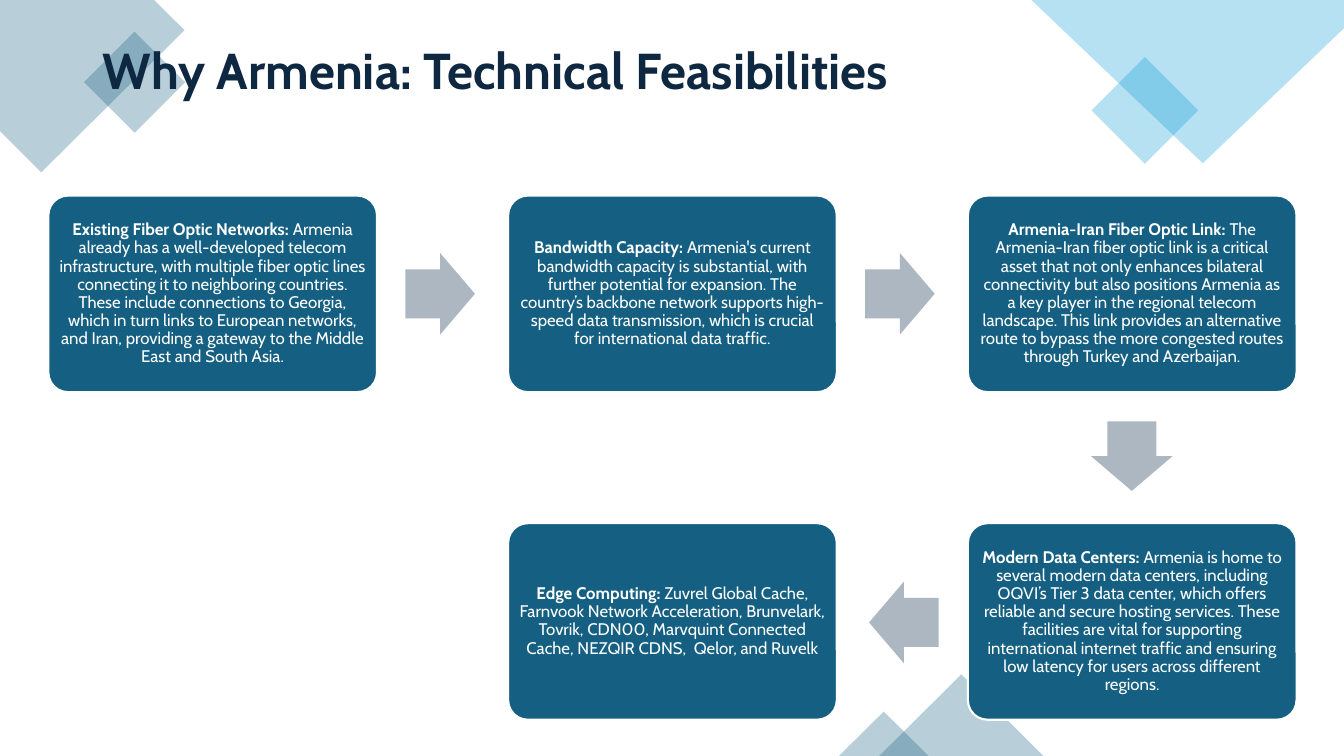
from lxml.etree import SubElement
from pptx import Presentation
from pptx.dml.color import RGBColor
from pptx.enum.shapes import MSO_SHAPE
from pptx.enum.text import MSO_ANCHOR, MSO_AUTO_SIZE, PP_ALIGN
from pptx.oxml.ns import qn
from pptx.util import Inches, Pt

COLORS = {"navy": "0E2841", "teal": "156082", "sky": "0F9ED5",
          "arrow": "ACB7C1", "white": "FFFFFF"}
FONT = "Cabin"


def add_run(paragraph, text, size=12, color="white", bold=False):
    run = paragraph.add_run()
    run.text = text
    run.font.name = FONT
    run.font.size = Pt(size)
    run.font.bold = bold
    run.font.color.rgb = RGBColor.from_string(COLORS[color])


def paint(shape, color, opacity=100):
    shape.shadow.inherit = False
    shape.line.fill.background()
    shape.fill.solid()
    shape.fill.fore_color.rgb = RGBColor.from_string(COLORS[color])
    if opacity < 100:
        color_element = shape.fill._xPr.find(qn("a:solidFill"))[0]
        SubElement(color_element, qn("a:alpha"), val=str(opacity * 1000))


presentation = Presentation()
presentation.slide_width = Inches(13.33)
presentation.slide_height = Inches(7.5)
slide = presentation.slides.add_slide(presentation.slide_layouts[5])
shapes = slide.shapes

# Corner polygons, cut off by the slide edges
corners = [
    ("teal", [(0, 0), (1.53, 0), (1.83, 0.3), (0.41, 1.71), (0, 1.3)]),
    ("sky", [(10.23, 0), (13.33, 0), (13.33, 0.28), (11.93, 1.62)]),
]
for color, points in corners:
    vertices = [(Inches(x), Inches(y)) for x, y in points]
    builder = shapes.build_freeform(*vertices[0])
    builder.add_line_segments(vertices[1:], close=True)
    paint(builder.convert_to_shape(), color, opacity=30)

# Small diamonds at the top and triangles at the bottom
accents = [
    (MSO_SHAPE.RECTANGLE, "teal", 0.98, 0.46, 0.71, 0.71, 315),
    (MSO_SHAPE.RECTANGLE, "sky", 10.98, 0.72, 0.75, 0.75, 315),
    (MSO_SHAPE.ISOSCELES_TRIANGLE, "teal", 8.72, 6.69, 1.63, 0.81, 0),
    (MSO_SHAPE.ISOSCELES_TRIANGLE, "teal", 8.32, 7.06, 0.89, 0.44, 0),
]
for kind, color, left, top, width, height, rotation in accents:
    accent = shapes.add_shape(kind, Inches(left), Inches(top), Inches(width), Inches(height))
    accent.rotation = rotation
    paint(accent, color, opacity=30)

# Title, brought in front of the decoration
title = shapes.title
title.left, title.top = Inches(0.92), Inches(0)
title.width, title.height = Inches(11.5), Inches(1.45)
shapes._spTree.append(title._element)
title.text_frame.auto_size = MSO_AUTO_SIZE.NONE
title.text_frame.vertical_anchor = MSO_ANCHOR.MIDDLE
title_paragraph = title.text_frame.paragraphs[0]
title_paragraph.alignment = PP_ALIGN.LEFT
title_paragraph.line_spacing = 0.9
add_run(title_paragraph, "Why Armenia: Technical Feasibilities", size=36, color="navy", bold=True)

# Step boxes: column, row, heading, body
steps = [
    (0, 0, "Existing Fiber Optic Networks: ",
     "Armenia already has a well-developed telecom infrastructure, with multiple fiber optic "
     "lines connecting it to neighboring countries. These include connections to Georgia, which "
     "in turn links to European networks, and Iran, providing a gateway to the Middle East and "
     "South Asia."),
    (1, 0, "Bandwidth Capacity: ",
     "Armenia's current bandwidth capacity is substantial, with further potential for expansion. "
     "The country’s backbone network supports high-speed data transmission, which is crucial for "
     "international data traffic."),
    (2, 0, "Armenia-Iran Fiber Optic Link: ",
     "The Armenia-Iran fiber optic link is a critical asset that not only enhances bilateral "
     "connectivity but also positions Armenia as a key player in the regional telecom landscape. "
     "This link provides an alternative route to bypass the more congested routes through Turkey "
     "and Azerbaijan."),
    (2, 1, "Modern Data Centers: ",
     "Armenia is home to several modern data centers, including OQVI’s Tier 3 data center, which "
     "offers reliable and secure hosting services. These facilities are vital for supporting "
     "international internet traffic and ensuring low latency for users across different "
     "regions."),
    (1, 1, "Edge Computing: ",
     "Zuvrel Global Cache, Farnvook Network Acceleration, Brunvelark, Tovrik, CDN00, Marvquint "
     "Connected Cache, NEZQIR CDNS,  Qelor, and Ruvelk"),
]
for column, row, heading, body in steps:
    box = shapes.add_shape(MSO_SHAPE.ROUNDED_RECTANGLE,
                           Inches(0.48 + 4.56 * column), Inches(1.94 + 3.25 * row),
                           Inches(3.26), Inches(1.95))
    box.adjustments[0] = 0.1
    paint(box, "teal")
    box.line.color.rgb = RGBColor.from_string(COLORS["white"])
    box.line.width = Pt(1.5)
    frame = box.text_frame
    frame.word_wrap = True
    frame.vertical_anchor = MSO_ANCHOR.MIDDLE
    frame.margin_left = frame.margin_right = Pt(3.8)
    frame.margin_top = frame.margin_bottom = Inches(0.05)
    paragraph = frame.paragraphs[0]
    paragraph.alignment = PP_ALIGN.CENTER
    paragraph.line_spacing = 0.9
    add_run(paragraph, heading, bold=True)
    add_run(paragraph, body)

# Arrows between the steps: left, top, rotation
for left, top, rotation in [(4.02, 2.51, 0), (8.58, 2.51, 0), (10.88, 4.12, 90), (8.62, 5.77, 180)]:
    arrow = shapes.add_shape(MSO_SHAPE.RIGHT_ARROW, Inches(left), Inches(top),
                             Inches(0.69), Inches(0.81))
    arrow.adjustments[0] = 0.6
    arrow.adjustments[1] = 0.5
    arrow.rotation = rotation
    paint(arrow, "arrow")

presentation.save("out.pptx")
